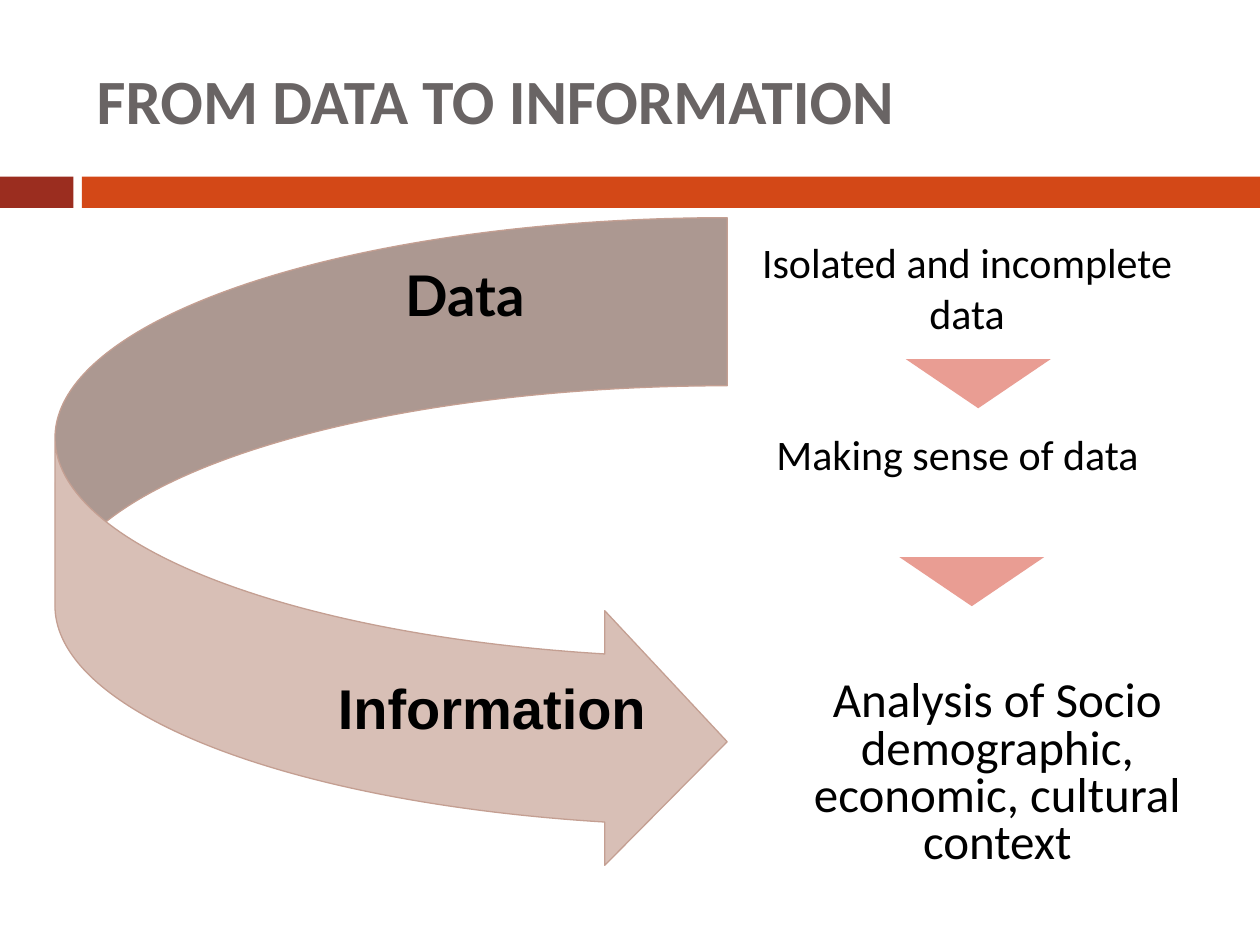
from pptx import Presentation
from pptx.dml.color import RGBColor
from pptx.enum import shapes, text
from pptx.util import Cm, Pt

COLORS = {
    "title": "696464",
    "body": "000000",
    "band_dark": "9B2D1F",
    "band": "D34817",
    "swoosh": "D8BFB6",
    "swoosh_edge": "C49F92",
    "marker": "E99D93",
}
CENTER = text.PP_ALIGN.CENTER
LEFT = text.PP_ALIGN.LEFT


def color(name):
    return RGBColor.from_string(COLORS[name])


def add_filled(slide, kind, box, fill):
    """Add a flat preset shape; box is left, top, width, height in cm."""
    shape = slide.shapes.add_shape(kind, *map(Cm, box))
    shape.shadow.inherit = False
    shape.fill.solid()
    shape.fill.fore_color.rgb = color(fill)
    shape.line.fill.background()
    return shape


def add_label(slide, wording, box, size, font="Calibri", bold=False,
              ink="body", align=CENTER, wrap=True,
              anchor=text.MSO_ANCHOR.TOP, spacing=None):
    frame = slide.shapes.add_textbox(*map(Cm, box)).text_frame
    frame.text = wording
    frame.word_wrap = wrap
    frame.vertical_anchor = anchor
    paragraph = frame.paragraphs[0]
    paragraph.alignment = align
    paragraph.line_spacing = spacing
    run_font = paragraph.runs[0].font
    run_font.name = font
    run_font.size = Pt(size)
    run_font.bold = bold
    run_font.color.rgb = color(ink)


def add_header(slide):
    rectangle = shapes.MSO_SHAPE.RECTANGLE
    add_filled(slide, rectangle, (0, 3.56, 1.48, 0.63), "band_dark")
    add_filled(slide, rectangle, (1.65, 3.56, 23.75, 0.63), "band")
    add_label(slide, "FROM DATA TO INFORMATION", (1.7, 0.64, 22.66, 2.74), 36,
              bold=True, ink="title", align=LEFT,
              anchor=text.MSO_ANCHOR.MIDDLE)


def add_swoosh(slide):
    """Add the curved arrow that leads from data to information."""
    swoosh = add_filled(slide, shapes.MSO_SHAPE.CURVED_RIGHT_ARROW,
                        (1.11, 4.39, 13.55, 13.13), "swoosh")
    for index, value in enumerate((0.258, 0.391, 0.188)):
        swoosh.adjustments[index] = value
    swoosh.line.color.rgb = color("swoosh_edge")
    swoosh.line.width = Pt(0.75)
    add_label(slide, "Data", (7.92, 5.13, 2.92, 1.63), 32, font="Lato",
              bold=True, align=LEFT, wrap=False)
    add_label(slide, "Information", (6.53, 13.46, 6.78, 1.63), 32,
              font="Arial", bold=True, wrap=False)


def add_stages(slide):
    add_label(slide, "Isolated and incomplete data",
              (14.91, 4.65, 9.17, 2.31), 24)
    add_label(slide, "Making sense of data", (13.54, 8.51, 11.53, 1.3), 24)
    add_label(slide, "Analysis of Socio demographic, economic, cultural context",
              (15.47, 13.59, 9.27, 4.09), 28, spacing=0.8)
    for left, top in ((18.26, 7.24), (18.13, 11.23)):
        marker = add_filled(slide, shapes.MSO_SHAPE.ISOSCELES_TRIANGLE,
                            (left, top, 2.92, 0.99), "marker")
        marker.rotation = 180


def main():
    deck = Presentation()
    deck.slide_width, deck.slide_height = Cm(25.4), Cm(19.05)
    slide = deck.slides.add_slide(deck.slide_layouts[6])
    add_header(slide)
    add_swoosh(slide)
    add_stages(slide)
    deck.save("out.pptx")


if __name__ == "__main__":
    main()
